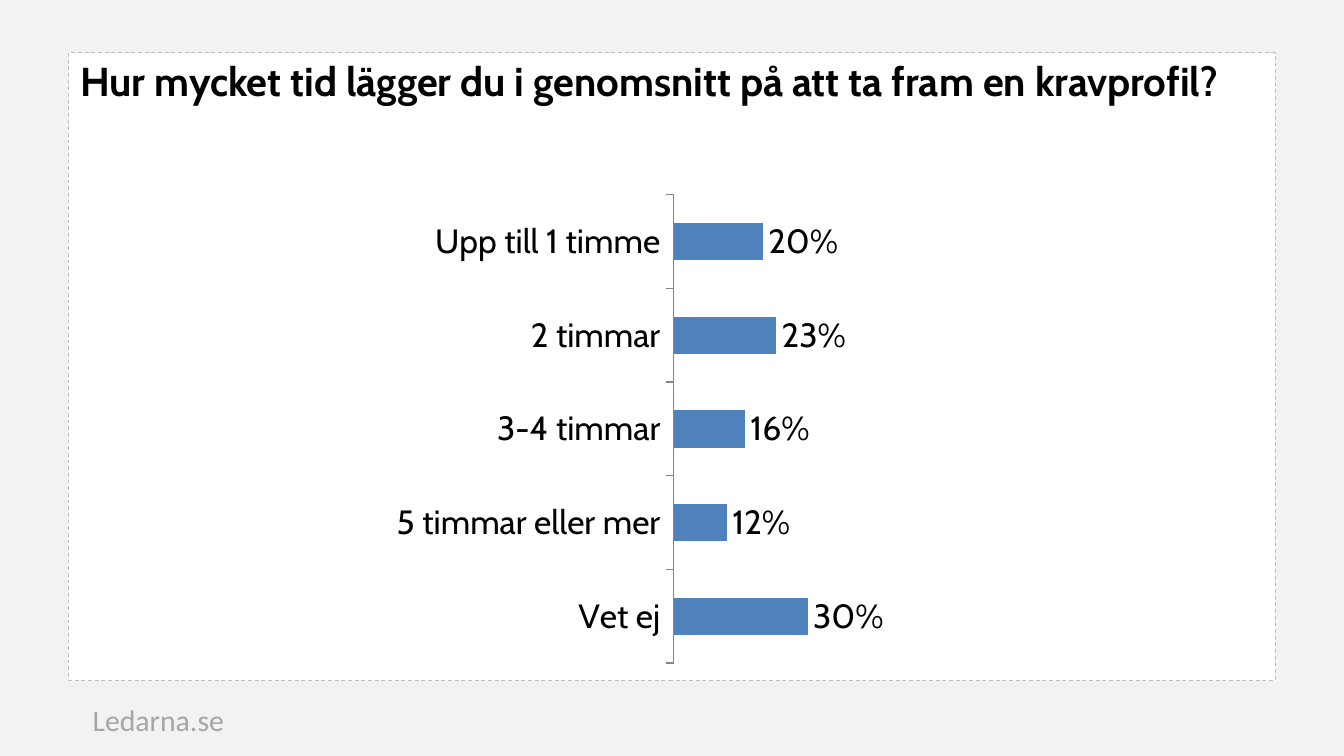
from lxml import etree
from pptx import Presentation
from pptx.chart.data import CategoryChartData
from pptx.dml.color import RGBColor
from pptx.enum.chart import XL_CHART_TYPE as ChartType
from pptx.enum.chart import XL_LABEL_POSITION as LabelPosition
from pptx.enum.chart import XL_TICK_MARK as TickMark
from pptx.enum.dml import MSO_LINE_DASH_STYLE as Dash
from pptx.enum.shapes import MSO_SHAPE as Shape
from pptx.enum.text import MSO_ANCHOR as Anchor
from pptx.oxml import parse_xml
from pptx.oxml.ns import nsdecls
from pptx.util import Cm, Pt

COLORS = {"margin": "F2F2F2", "frame": "BFBFBF", "footer": "A6A6A6",
          "text": "000000", "bar": "4F81BD", "axis": "868686"}
WIDTH, HEIGHT = 25.4, 14.29
FRAME = (1.3, 1, 22.8, 11.86)  # left, top, width, height in cm
ANSWERS = {"Upp till 1 timme": 0.20, "2 timmar": 0.23, "3-4 timmar": 0.16,
           "5 timmar eller mer": 0.12, "Vet ej": 0.30}


def color(name):
    return RGBColor.from_string(COLORS[name])


def lengths(box):
    return [Cm(value) for value in box]


def add_rectangle(slide, box):
    shape = slide.shapes.add_shape(Shape.RECTANGLE, *lengths(box))
    shape.shadow.inherit = False
    return shape


def add_margins(slide, frame):
    """Fill the strips between the slide edges and the frame."""
    left, top, width, height = frame
    right, bottom = left + width, top + height
    strips = [(0, 0, WIDTH, top), (0, bottom, WIDTH, HEIGHT - bottom),
              (0, top, left, height), (right, top, WIDTH - right, height)]
    for strip in strips:
        shape = add_rectangle(slide, strip)
        shape.fill.solid()
        shape.fill.fore_color.rgb = color("margin")
        shape.line.fill.background()


def add_frame(slide, frame):
    shape = add_rectangle(slide, frame)
    shape.fill.background()
    shape.line.color.rgb = color("frame")
    shape.line.width = Pt(0.5)
    shape.line.dash_style = Dash.DASH


def add_text(slide, box, text, font_name, size, color_name, bold=False, margin_top=0.13):
    text_frame = slide.shapes.add_textbox(*lengths(box)).text_frame
    text_frame.word_wrap = True
    text_frame.vertical_anchor = Anchor.TOP
    text_frame.margin_top = Cm(margin_top)
    run = text_frame.paragraphs[0].add_run()
    run.text = text
    run.font.name = font_name
    run.font.size = Pt(size)
    run.font.bold = bold
    run.font.color.rgb = color(color_name)


def set_plot_layout(chart, x, y, width, height):
    """Place the inner plot area, in fractions of the chart."""
    plot_area = chart.plots[0]._element.getparent()
    for old_layout in plot_area.findall("{*}layout"):
        plot_area.remove(old_layout)
    layout = parse_xml(f"<c:layout {nsdecls('c')}><c:manualLayout/></c:layout>")
    settings = {"layoutTarget": "inner", "xMode": "edge", "yMode": "edge",
                "x": x, "y": y, "w": width, "h": height}
    namespace = layout.nsmap["c"]
    for tag, value in settings.items():
        etree.SubElement(layout[0], f"{{{namespace}}}{tag}", val=str(value))
    plot_area.insert(0, layout)


def add_answer_chart(slide, box):
    data = CategoryChartData(number_format="0%")
    data.categories = list(ANSWERS)
    data.add_series("Series 1", list(ANSWERS.values()))
    chart = slide.shapes.add_chart(ChartType.BAR_CLUSTERED, *lengths(box), data).chart
    chart.has_legend = False
    chart.has_title = False
    chart.font.name = "Cabin"
    chart.font.size = Pt(18)
    chart.font.color.rgb = color("text")
    set_plot_layout(chart, 0.5, 0.03, 0.37, 0.94)

    category_axis = chart.category_axis
    category_axis.reverse_order = True
    category_axis.major_tick_mark = TickMark.OUTSIDE
    category_axis.format.line.color.rgb = color("axis")
    category_axis.format.line.width = Pt(0.75)

    value_axis = chart.value_axis
    value_axis.minimum_scale = 0
    value_axis.maximum_scale = 1
    value_axis.major_unit = 0.2
    value_axis.has_major_gridlines = False
    value_axis.visible = False

    plot = chart.plots[0]
    plot.gap_width = 150
    plot.vary_by_categories = False
    series = plot.series[0]
    series.format.fill.solid()
    series.format.fill.fore_color.rgb = color("bar")
    labels = series.data_labels
    labels.show_value = True
    labels.position = LabelPosition.OUTSIDE_END
    labels.number_format = "0%"
    labels.number_format_is_linked = False


def main():
    presentation = Presentation()
    presentation.slide_width = Cm(WIDTH)
    presentation.slide_height = Cm(HEIGHT)
    slide = presentation.slides.add_slide(presentation.slide_layouts[6])
    left, top, width, height = FRAME
    add_margins(slide, FRAME)
    add_frame(slide, FRAME)
    add_text(slide, (left + 0.2, top + height + 0.27, 3.35, 0.94),
             "Ledarna.se", "Calibri", 16, "footer")
    add_text(slide, (1.27, 0.58, 22.86, 2.77),
             "Hur mycket tid lägger du i genomsnitt på att ta fram en kravprofil?",
             "Cabin", 21.6, "text", bold=True, margin_top=0.48)
    add_answer_chart(slide, (left, 3.4, 22.86, 9.42))
    presentation.save("out.pptx")


if __name__ == "__main__":
    main()
